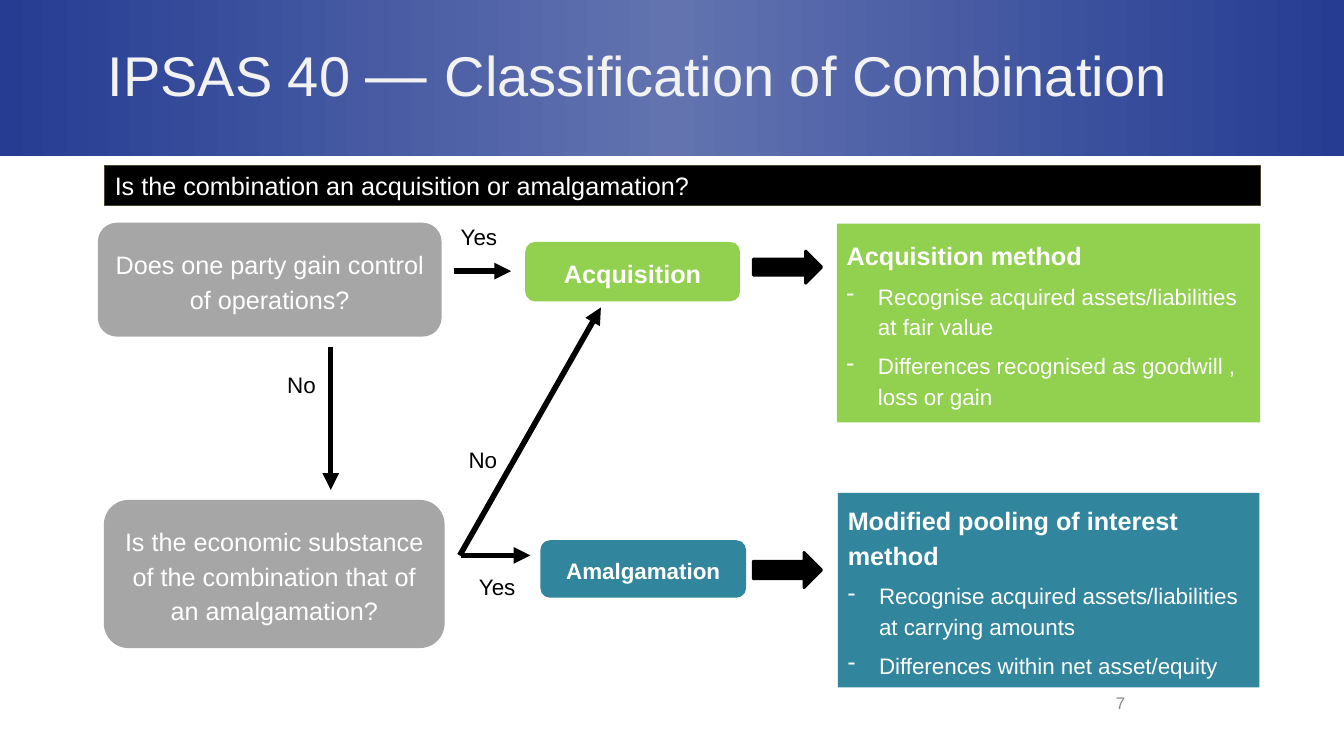
"""Build the IPSAS 40 decision-flow slide on classifying a combination."""
from copy import deepcopy
from dataclasses import dataclass

from lxml.etree import SubElement
from pptx import Presentation
from pptx.dml.color import RGBColor
from pptx.enum.shapes import MSO_CONNECTOR as Connector, MSO_SHAPE as Preset
from pptx.enum.text import MSO_ANCHOR as Anchor, PP_ALIGN as Align
from pptx.oxml.ns import qn
from pptx.util import Inches, Pt


@dataclass(frozen=True)
class Theme:
    font: str = "Arial"
    navy: str = "253C92"
    navy_light: str = "6273B0"
    title_ink: str = "F2F2F2"
    black: str = "000000"
    white: str = "FFFFFF"
    grey: str = "A6A6A6"
    green: str = "92D050"
    teal: str = "31859C"
    olive: str = "4A452A"
    number_ink: str = "898989"
    title: int = 40
    dash: int = 44
    large: int = 18
    body: int = 16
    small: int = 12
    arrow: int = 4
    spacing: float = 1.14
    gap: int = 6


THEME = Theme()
TITLE = [("IPSAS 40 ", THEME.title), ("— ", THEME.dash),
         ("Classification of Combination", THEME.title)]
QUESTION = "Is the combination an acquisition or amalgamation?"
PAGE_NUMBER = "7"
STEPS = [
    ("Does one party gain control of operations?",
     (0.97, 2.21, 3.41, 1.13), THEME.grey, THEME.large, False),
    ("Is the economic substance of the combination that of an amalgamation?",
     (1.03, 4.96, 3.38, 1.47), THEME.grey, THEME.large, False),
    ("Amalgamation", (5.36, 5.36, 2.04, 0.57), THEME.teal, THEME.body, True),
    ("Acquisition", (5.21, 2.4, 2.13, 0.59), THEME.green, THEME.large, True),
]
METHODS = [
    ("Modified pooling of interest method",
     ["Recognise acquired assets/liabilities at carrying amounts",
      "Differences within net asset/equity"],
     (8.31, 4.89, 4.18, 1.93), THEME.teal),
    ("Acquisition method",
     ["Recognise acquired assets/liabilities at fair value",
      "Differences recognised as goodwill , loss or gain"],
     (8.3, 2.22, 4.2, 1.97), THEME.green),
]
ANSWERS = [
    ("Yes", (4.46, 2.24, 0.57, 0.38)),
    ("No", (2.65, 3.7, 0.58, 0.28)),
    ("No", (4.46, 4.45, 0.57, 0.38)),
    ("Yes", (4.59, 5.71, 0.62, 0.5)),
]
FLOWS = [(4.5, 2.69, 5.07, 2.69), (3.28, 3.44, 3.28, 4.86),
         (4.56, 5.51, 5.96, 3.05), (4.57, 5.51, 5.26, 5.51)]
BLOCK_ARROWS = [(7.47, 5.48, 0.68, 0.35), (7.47, 2.49, 0.68, 0.32)]


def lengths(values):
    return [Inches(value) for value in values]


def color(code):
    return RGBColor.from_string(code)


def add_box(page, preset, place, fill, line=None, width=0.75):
    box = page.shapes.add_shape(preset, *lengths(place))
    box.shadow.inherit = False
    box.fill.solid()
    box.fill.fore_color.rgb = color(fill)
    if line:
        box.line.color.rgb = color(line)
        box.line.width = Pt(width)
    else:
        box.line.fill.background()
    box.text_frame.word_wrap = True
    return box


def add_label(page, place, wrap=True):
    frame = page.shapes.add_textbox(*lengths(place)).text_frame
    frame.word_wrap = wrap
    return frame


def style(para, size, ink, bold=False, align=Align.LEFT):
    para.alignment = align
    para.font.name = THEME.font
    para.font.size = Pt(size)
    para.font.bold = bold
    para.font.color.rgb = color(ink)


def space(para):
    para.line_spacing = THEME.spacing
    para.space_after = Pt(THEME.gap)


def add_dash(para):
    props = para._p.get_or_add_pPr()
    props.set("marL", str(Inches(0.31)))
    props.set("indent", str(Inches(-0.31)))
    SubElement(props, qn("a:buChar"), char="-")


def add_banner(page):
    band = add_box(page, Preset.RECTANGLE, (0, 0, 13.33, 1.55), THEME.navy)
    band.fill.gradient()
    band.fill.gradient_angle = 0
    first, last = band.fill.gradient_stops
    for stop, position in ((first, 0), (last, 1)):
        stop.color.rgb = color(THEME.navy)
        stop.position = position
    stops = band._element.spPr.find(qn("a:gradFill")).find(qn("a:gsLst"))
    stops.insert(1, deepcopy(stops[0]))
    middle = band.fill.gradient_stops[1]
    middle.color.rgb = color(THEME.navy_light)
    middle.position = 0.5
    frame = add_label(page, (0.97, 0.09, 12.08, 1.25))
    frame.vertical_anchor = Anchor.MIDDLE
    para = frame.paragraphs[0]
    style(para, THEME.title, THEME.title_ink)
    for text, size in TITLE:
        span = para.add_run()
        span.text = text
        span.font.size = Pt(size)


def add_flow(page, ends):
    flow = page.shapes.add_connector(Connector.STRAIGHT, *lengths(ends))
    flow.line.color.rgb = color(THEME.black)
    flow.line.width = Pt(THEME.arrow)
    SubElement(flow.line._get_or_add_ln(), qn("a:tailEnd"), type="triangle")
    SubElement(flow._element.spPr, qn("a:effectLst"))


def add_step(page, text, place, fill, size, bold):
    frame = add_box(page, Preset.ROUNDED_RECTANGLE, place, fill).text_frame
    frame.vertical_anchor = Anchor.MIDDLE
    para = frame.paragraphs[0]
    para.text = text
    space(para)
    style(para, size, THEME.white, bold, Align.CENTER)


def add_method(page, heading, points, place, fill):
    frame = add_box(page, Preset.RECTANGLE, place, fill).text_frame
    frame.vertical_anchor = Anchor.MIDDLE
    para = frame.paragraphs[0]
    para.text = heading
    space(para)
    style(para, THEME.large, THEME.white, True)
    for point in points:
        para = frame.add_paragraph()
        para.text = point
        add_dash(para)
        space(para)
        style(para, THEME.body, THEME.white)


def main():
    deck = Presentation()
    deck.slide_width, deck.slide_height = lengths((13.33, 7.5))
    page = deck.slides.add_slide(deck.slide_layouts[6])
    add_banner(page)
    for ends in FLOWS:
        add_flow(page, ends)
    for text, place in ANSWERS:
        para = add_label(page, place).paragraphs[0]
        para.text = text
        para.line_spacing = Pt(14)
        style(para, THEME.body, THEME.black, align=Align.RIGHT)
    for step in STEPS:
        add_step(page, *step)
    number = add_label(page, (10.97, 6.82, 0.29, 0.3), wrap=False).paragraphs[0]
    number.text = PAGE_NUMBER
    style(number, THEME.small, THEME.number_ink)
    bar = add_box(page, Preset.RECTANGLE, (1.04, 1.64, 11.46, 0.4),
                  THEME.black, THEME.olive)
    bar.text_frame.vertical_anchor = Anchor.TOP
    question = bar.text_frame.paragraphs[0]
    question.text = QUESTION
    style(question, THEME.large, THEME.white)
    for place in BLOCK_ARROWS:
        add_box(page, Preset.RIGHT_ARROW, place, THEME.black, THEME.black, 2)
    for method in METHODS:
        add_method(page, *method)
    deck.save("out.pptx")


if __name__ == "__main__":
    main()
